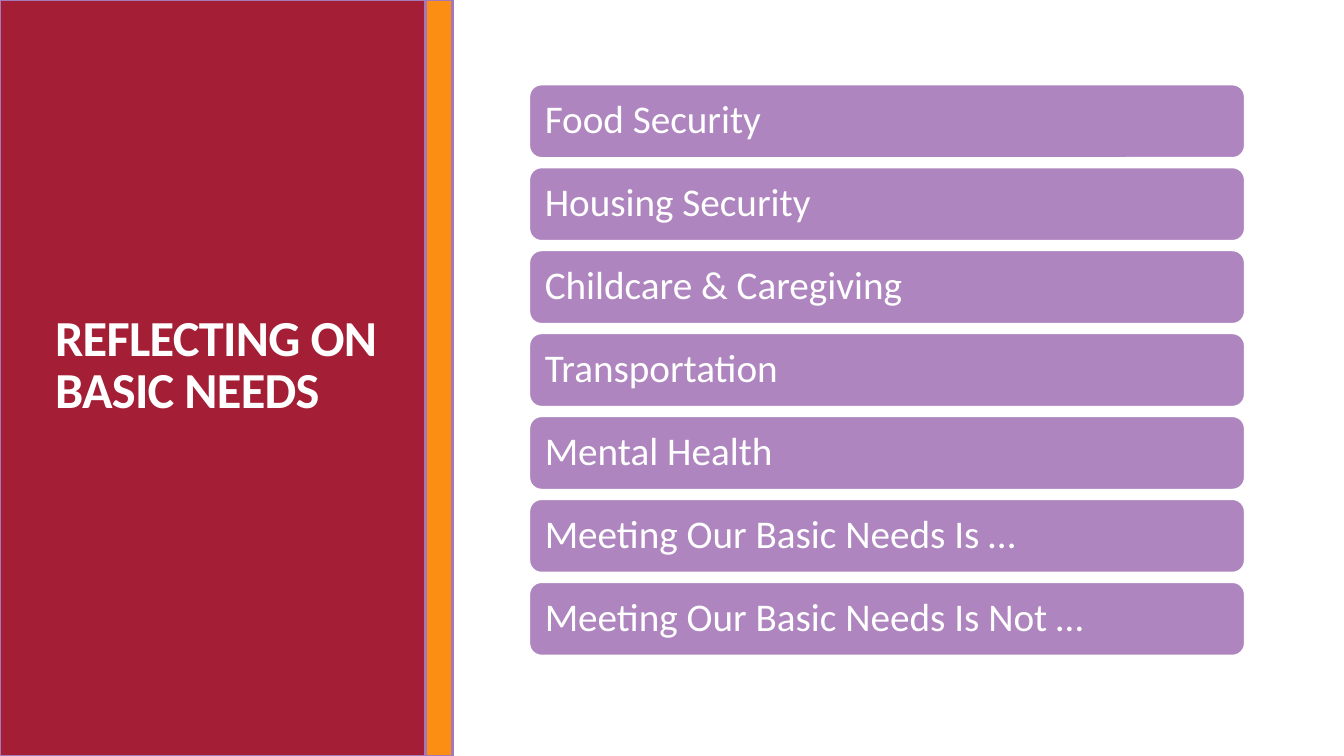
from dataclasses import dataclass

from pptx import Presentation
from pptx.dml.color import RGBColor
from pptx.enum.shapes import MSO_SHAPE as Shape
from pptx.enum.text import MSO_ANCHOR as Anchor, PP_ALIGN as Align
from pptx.util import Cm, Pt


@dataclass(frozen=True)
class Theme:
    font: str = "Calibri"
    title_size: Pt = Pt(36)
    need_size: Pt = Pt(28)
    panel: RGBColor = RGBColor(0xA4, 0x1E, 0x35)
    stripe: RGBColor = RGBColor(0xFC, 0x8E, 0x13)
    edge: RGBColor = RGBColor(0xA5, 0x78, 0xBA)
    bar: RGBColor = RGBColor(0xAE, 0x85, 0xBF)
    white: RGBColor = RGBColor(0xFF, 0xFF, 0xFF)


theme = Theme()


def add_block(kind, left, top, width, height, fill, line, line_width):
    block = slide.shapes.add_shape(kind, Cm(left), Cm(top), Cm(width), Cm(height))
    block.shadow.inherit = False
    block.fill.solid()
    block.fill.fore_color.rgb = fill
    block.line.color.rgb = line
    block.line.width = Pt(line_width)
    return block


def write(frame, text, size, spacing, bold=False):
    frame.word_wrap = True
    paragraph = frame.paragraphs[0]
    paragraph.text = text
    paragraph.alignment = Align.LEFT
    paragraph.line_spacing = spacing
    paragraph.font.name = theme.font
    paragraph.font.size = size
    paragraph.font.bold = bold
    paragraph.font.color.rgb = theme.white
    return paragraph


deck = Presentation()
deck.slide_width, deck.slide_height = Cm(33.87), Cm(19.05)
slide = deck.slides.add_slide(deck.slide_layouts[6])

# Side panel and stripe
add_block(Shape.RECTANGLE, 0, 0, 10.72, 19.05, theme.panel, theme.edge, 2)
add_block(Shape.RECTANGLE, 10.72, 0, 0.69, 19.05, theme.stripe, theme.edge, 2)

# Title, with slightly tightened letters
title = slide.shapes.add_textbox(Cm(1.14), Cm(4.32), Cm(8.89), Cm(6.35))
title.text_frame.vertical_anchor = Anchor.BOTTOM
heading = write(title.text_frame, "REFLECTING ON BASIC NEEDS", theme.title_size, 0.85, True)
heading.runs[0]._r.get_or_add_rPr().set("spc", "-50")

# Stack of basic needs
needs = [
    "Food Security",
    "Housing Security",
    "Childcare & Caregiving",
    "Transportation",
    "Mental Health",
    "Meeting Our Basic Needs Is …",
    "Meeting Our Basic Needs Is Not …",
]
first_top, pitch = 2.13, 2.09
for row, need in enumerate(needs):
    bar = add_block(Shape.ROUNDED_RECTANGLE, 13.34, first_top + row * pitch, 18.03, 1.85,
                    theme.bar, theme.white, 1.25)
    frame = bar.text_frame
    frame.margin_left = frame.margin_right = Cm(0.3)
    frame.margin_top = frame.margin_bottom = Cm(0.3)
    frame.vertical_anchor = Anchor.MIDDLE
    write(frame, need, theme.need_size, 0.9)

deck.save("out.pptx")
